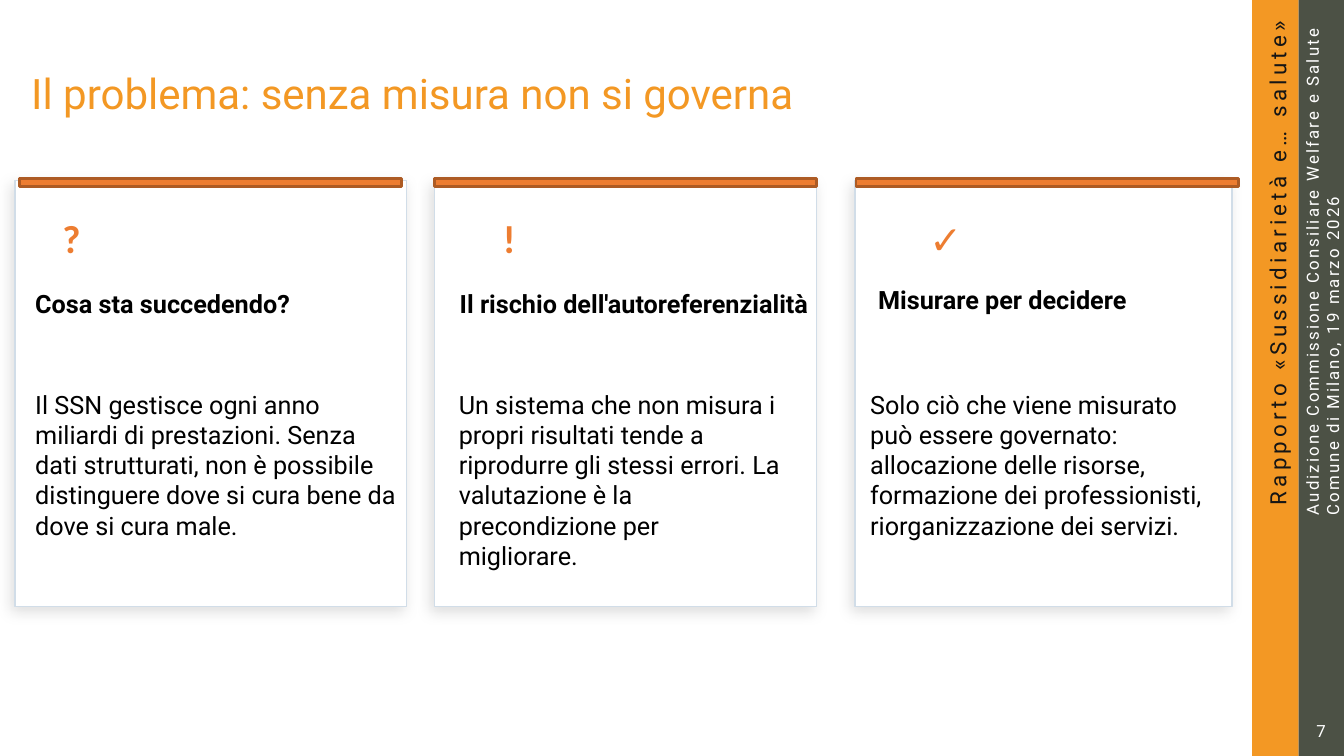
"""Build the slide on measuring results, with three cards and a side band."""
from lxml import etree
from pptx import Presentation
from pptx import util as u
from pptx.dml.color import RGBColor
from pptx.enum import shapes, text
from pptx.oxml import ns

AMBER = RGBColor(0xF3, 0x98, 0x24)
OLIVE = RGBColor(0x4C, 0x51, 0x45)
INK = RGBColor(0x15, 0x15, 0x15)
BLACK = RGBColor(0, 0, 0)
WHITE = RGBColor(0xFF, 0xFF, 0xFF)
ORANGE = RGBColor(0xED, 0x7D, 0x31)
RUST = RGBColor(0xAD, 0x5B, 0x24)
PALE = RGBColor(0xD1, 0xDD, 0xE8)

TITLE = "Il problema: senza misura non si governa"
REPORT = ["Rapporto «Sussidiarietà e… salute»"]
EVENT = ["Audizione Commissione Consiliare Welfare e Salute",
         "Comune di Milano, 19 marzo 2026"]
PAGE = "7"

CARDS = [
    {"card": (0.15, 3.88), "bar": 0.19,
     "icon": ("?", (0.41, 2.1, 0.6, 0.52)),
     "head": ("Cosa sta succedendo?", (0.35, 2.86, 3.6, 0.31)),
     "body": ("Il SSN gestisce ogni anno miliardi di prestazioni. Senza dati "
              "strutturati, non è possibile distinguere dove si cura bene da "
              "dove si cura male.", (0.35, 3.86, 3.6, 1.53))},
    {"card": (4.31, 3.79), "bar": 4.31,
     "icon": ("!", (4.75, 2.1, 0.6, 0.52)),
     "head": ("Il rischio dell'autoreferenzialità", (4.56, 2.86, 3.6, 0.61)),
     "body": ("Un sistema che non misura i propri risultati tende a riprodurre "
              "gli stessi errori. La valutazione è la precondizione per "
              "migliorare.", (4.55, 3.86, 3.21, 1.83))},
    {"card": (8.48, 3.74), "bar": 8.49,
     "icon": ("✓", (9.08, 2.07, 0.6, 0.59)),
     "head": ("Misurare per decidere", (8.71, 2.82, 3.6, 0.31)),
     "body": ("Solo ciò che viene misurato può essere governato: allocazione "
              "delle risorse, formazione dei professionisti, riorganizzazione "
              "dei servizi.", (8.63, 3.86, 3.39, 1.53))},
]

MID = text.MSO_ANCHOR.MIDDLE
TOP = text.MSO_ANCHOR.TOP
LEFT, MIDST, RIGHT = (text.PP_ALIGN.LEFT, text.PP_ALIGN.CENTER,
                      text.PP_ALIGN.RIGHT)


def put(item, vals):
    for name, val in vals.items():
        setattr(item, name, val)


def rect(slide, box, fill, line=None, width=1):
    shape = slide.shapes.add_shape(shapes.MSO_SHAPE.RECTANGLE,
                                   *map(u.Inches, box))
    shape.shadow.inherit = False
    shape.fill.solid()
    shape.fill.fore_color.rgb = fill
    if line is None:
        shape.line.fill.background()
    else:
        shape.line.color.rgb = line
        shape.line.width = u.Pt(width)
    return shape


def shade(shape):
    effect = shape._element.spPr.find(ns.qn("a:effectLst"))
    outer = etree.SubElement(effect, ns.qn("a:outerShdw"), {
        "blurRad": str(u.Pt(10)), "dist": str(u.Pt(4)),
        "dir": str(135 * 60000), "algn": "bl", "rotWithShape": "0"})
    color = etree.SubElement(outer, ns.qn("a:srgbClr"), val="000000")
    etree.SubElement(color, ns.qn("a:alpha"), val="12000")


def write(slide, box, lines, size, color, font="Roboto", bold=False,
          align=LEFT, anchor=TOP, inset=0, turn=0, space=0, wrap=True):
    shape = slide.shapes.add_textbox(*map(u.Inches, box))
    shape.rotation = turn
    frame = shape.text_frame
    pad = u.Inches(inset)
    put(frame, {"word_wrap": wrap, "vertical_anchor": anchor,
                "margin_left": pad, "margin_right": pad,
                "margin_top": pad, "margin_bottom": pad})
    for pos, line in enumerate(lines):
        para = frame.add_paragraph() if pos else frame.paragraphs[0]
        para.alignment = align
        run = para.add_run()
        run.text = line
        put(run.font, {"name": font, "size": u.Pt(size), "bold": bold})
        run.font.color.rgb = color
        if space:
            run.font._element.set("spc", str(int(space * 100)))


def main():
    deck = Presentation()
    put(deck, {"slide_width": u.Inches(13.33), "slide_height": u.Inches(7.5)})
    slide = deck.slides.add_slide(deck.slide_layouts[6])

    for left, fill in ((12.42, AMBER), (12.88, OLIVE)):
        rect(slide, (left, 0, 0.46, 7.5), fill)
    write(slide, (9.39, 3.36, 6.56, 0.26), REPORT, 16, INK,
          align=RIGHT, anchor=MID, turn=270, space=3)
    write(slide, (10.14, 1.94, 5.95, 0.39), EVENT, 12, WHITE,
          anchor=MID, turn=270, space=1.5)
    write(slide, (0.31, -0.02, 10.41, 1.88), [TITLE], 30, AMBER, anchor=MID)
    write(slide, (12.99, 7.1, 0.21, 0.29), [PAGE], 12, WHITE,
          align=RIGHT, anchor=MID, inset=0.05, wrap=False)

    styles = {
        "icon": {"size": 28, "color": ORANGE, "font": "Calibri", "bold": True,
                 "align": MIDST, "anchor": MID, "inset": 0.07},
        "head": {"size": 18, "color": BLACK, "bold": True},
        "body": {"size": 18, "color": BLACK},
    }
    for card in CARDS:
        left, width = card["card"]
        shade(rect(slide, (left, 1.79, width, 4.23), WHITE, PALE))
        rect(slide, (card["bar"], 1.77, 3.79, 0.08), ORANGE, RUST, 2)
        for part, style in styles.items():
            words, box = card[part]
            write(slide, box, [words], **style)

    deck.save("out.pptx")


if __name__ == "__main__":
    main()
